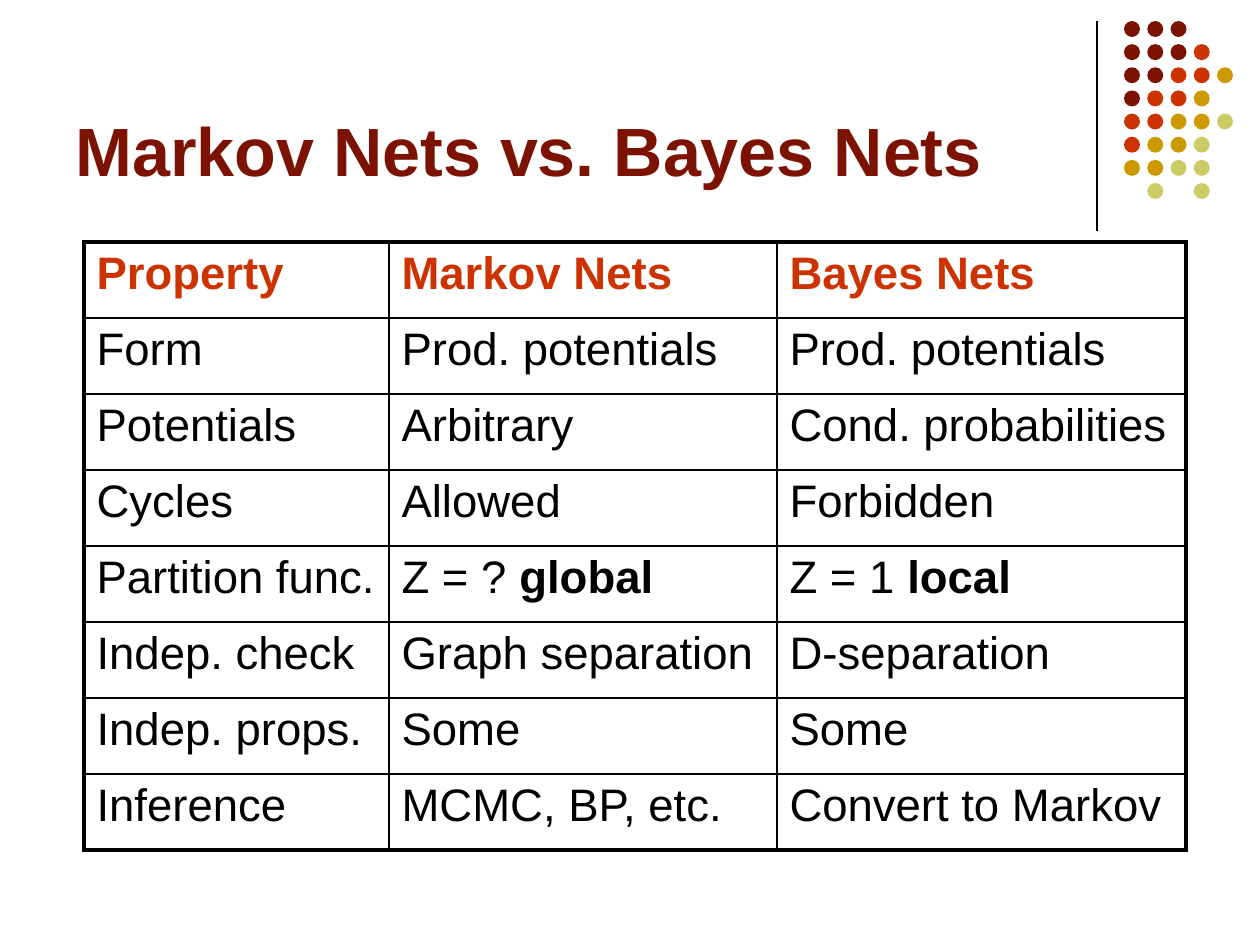
from lxml.etree import SubElement
from pptx import Presentation
from pptx.dml.color import RGBColor
from pptx.enum.shapes import MSO_CONNECTOR, MSO_SHAPE
from pptx.enum.text import MSO_ANCHOR
from pptx.oxml.ns import qn
from pptx.util import Emu, Pt

MAROON = RGBColor(0x7C, 0x13, 0x02)
RED = RGBColor(0xCC, 0x33, 0x00)
GOLD = RGBColor(0xCC, 0x99, 0x00)
OLIVE = RGBColor(0xCC, 0xCC, 0x66)
BLACK = RGBColor(0x00, 0x00, 0x00)

DOT_COLORS = {"M": MAROON, "R": RED, "G": GOLD, "O": OLIVE}
DOT_ROWS = ["MMM", "MMMR", "MMRRG", "MRRG", "RRGGO", "RGGO", "GGOO", " O O"]
DOT_SIZE = 16

TITLE_FORMAT = {"name": "Arial", "size": Pt(39), "bold": True}
HEADER_FORMAT = {"name": "Arial", "size": Pt(26), "bold": True}
BODY_FORMAT = {"name": "Arial", "size": Pt(26), "bold": False}
STRONG_FORMAT = {**BODY_FORMAT, "bold": True}

COLUMN_WIDTHS = [305, 388, 409]
THIN, THICK = Pt(1), Pt(2.25)
ROWS = [
    [["Property"], ["Markov Nets"], ["Bayes Nets"]],
    [["Form"], ["Prod. potentials"], ["Prod. potentials"]],
    [["Potentials"], ["Arbitrary"], ["Cond. probabilities"]],
    [["Cycles"], ["Allowed"], ["Forbidden"]],
    [["Partition func."], ["Z = ? ", "global"], ["Z = 1 ", "local"]],
    [["Indep. check"], ["Graph separation"], ["D-separation"]],
    [["Indep. props."], ["Some"], ["Some"]],
    [["Inference"], ["MCMC, BP, etc."], ["Convert to Markov"]],
]


def px(length):
    """Turn a length in px into EMU."""
    return Emu(round(length * 914400 / 126))


def add_span(para, text, format_values, color):
    """Append a formatted run to a paragraph."""
    span = para.add_run()
    span.text = text
    for name, value in format_values.items():
        setattr(span.font, name, value)
    span.font.color.rgb = color


def add_title(page, left, top, width, height):
    """Place the bottom-anchored heading."""
    box = page.shapes.add_textbox(px(left), px(top), px(width), px(height))
    frame = box.text_frame
    frame.word_wrap = True
    frame.vertical_anchor = MSO_ANCHOR.BOTTOM
    add_span(frame.paragraphs[0], "Markov Nets vs. Bayes Nets", TITLE_FORMAT, MAROON)


def add_divider(page, left, top, height):
    """Draw the upright rule beside the dots."""
    rule = page.shapes.add_connector(
        MSO_CONNECTOR.STRAIGHT, px(left), px(top), px(left), px(top + height))
    rule.line.color.rgb = BLACK
    rule.line.width = Pt(0.75)
    SubElement(rule._element.spPr, qn("a:effectLst"))


def add_dots(page, left, top, width, height):
    """Spread the coloured dots evenly over the box."""
    group = page.shapes.add_group_shape()
    step_x = (width - DOT_SIZE) / (max(map(len, DOT_ROWS)) - 1)
    step_y = (height - DOT_SIZE) / (len(DOT_ROWS) - 1)
    for row, codes in enumerate(DOT_ROWS):
        for column, code in enumerate(codes):
            if code not in DOT_COLORS:
                continue
            dot = group.shapes.add_shape(
                MSO_SHAPE.OVAL, px(left + column * step_x), px(top + row * step_y),
                px(DOT_SIZE), px(DOT_SIZE))
            dot.shadow.inherit = False
            dot.fill.solid()
            dot.fill.fore_color.rgb = DOT_COLORS[code]
            dot.line.fill.background()


def set_borders(cell, widths):
    """Give a cell black borders, one width for each side."""
    properties = cell._tc.get_or_add_tcPr()
    for side, width in widths.items():
        line = SubElement(properties, qn(f"a:ln{side}"), w=str(int(width)))
        fill = SubElement(line, qn("a:solidFill"))
        SubElement(fill, qn("a:srgbClr"), val=str(BLACK))


def add_comparison(page, left, top, width, height):
    """Place the comparison table with a thick outer frame."""
    last_row, last_column = len(ROWS) - 1, len(COLUMN_WIDTHS) - 1
    table = page.shapes.add_table(
        len(ROWS), len(COLUMN_WIDTHS), px(left), px(top), px(width), px(height)).table
    table.first_row = table.horz_banding = False
    for column, column_width in zip(table.columns, COLUMN_WIDTHS):
        column.width = px(column_width)
    for row, texts in enumerate(ROWS):
        for column, parts in enumerate(texts):
            cell = table.cell(row, column)
            set_borders(cell, {
                "L": THICK if column == 0 else THIN,
                "R": THICK if column == last_column else THIN,
                "T": THICK if row == 0 else THIN,
                "B": THICK if row == last_row else THIN,
            })
            cell.fill.background()
            formats = [BODY_FORMAT if row else HEADER_FORMAT, STRONG_FORMAT]
            for text, format_values in zip(parts, formats):
                add_span(cell.text_frame.paragraphs[0], text, format_values,
                         BLACK if row else RED)


def main():
    """Build and save the deck."""
    deck = Presentation()
    deck.slide_width, deck.slide_height = px(1260), px(945)
    page = deck.slides.add_slide(deck.slide_layouts[6])
    add_divider(page, 1097, 21, 210)
    add_dots(page, 1124, 21, 109, 178)
    add_title(page, 63, 16, 1040, 180)
    add_comparison(page, 84, 242, sum(COLUMN_WIDTHS), 608)
    deck.save("out.pptx")


if __name__ == "__main__":
    main()
